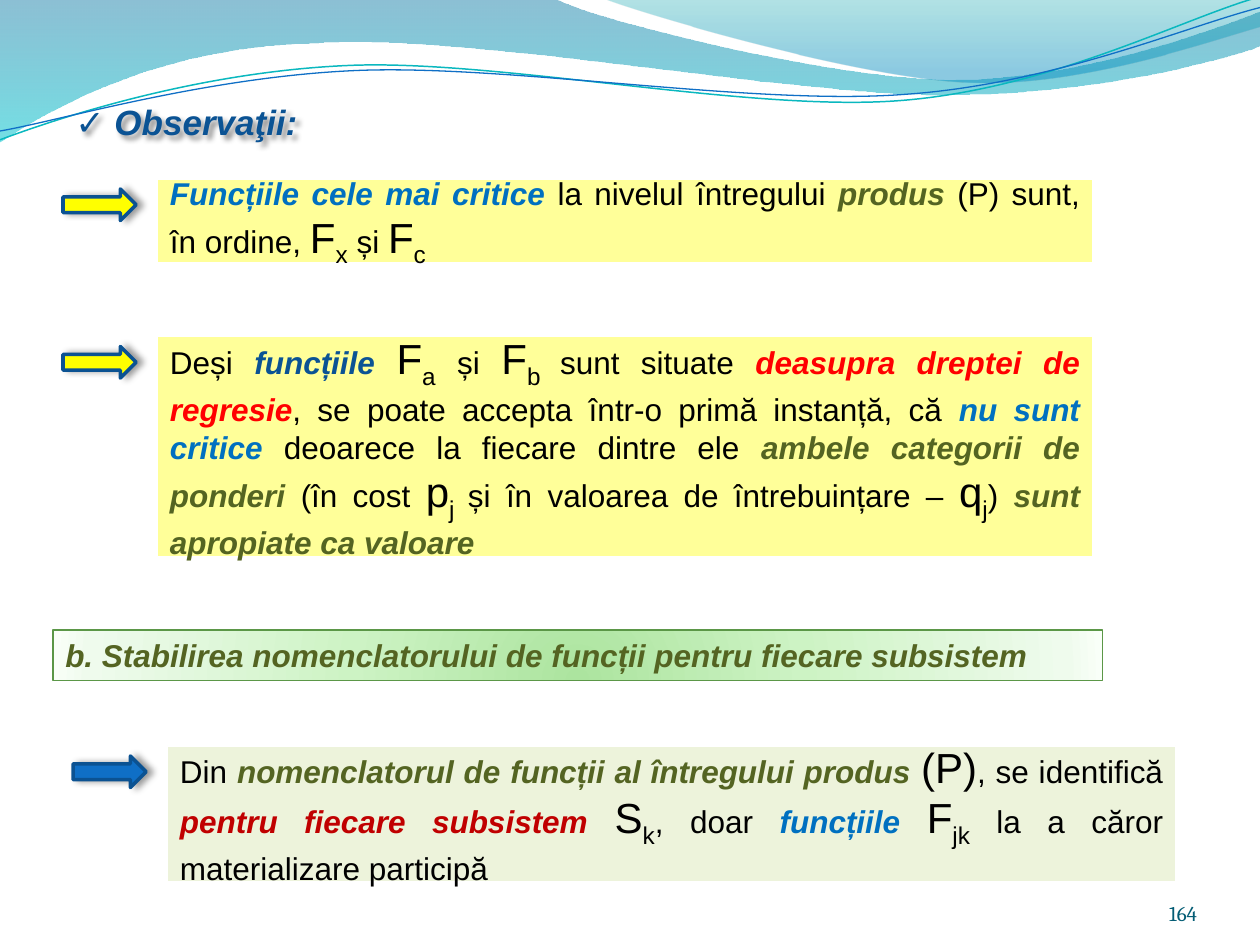
from lxml.etree import SubElement
from pptx import Presentation
from pptx.dml.color import RGBColor
from pptx.enum.shapes import MSO_SHAPE
from pptx.enum.text import MSO_ANCHOR, PP_ALIGN
from pptx.oxml import parse_xml
from pptx.oxml.ns import nsdecls, qn
from pptx.util import Inches, Pt

THEME = {
    "font": "Arial", "number_font": "Cambria",
    "title": 20, "body": 18, "symbol": 24, "number": 12,
    "black": "000000", "navy": "0B5394", "blue": "0070C0", "olive": "546422",
    "red": "FF0000", "dark_red": "C00000", "teal": "045D75",
    "arrow_line": "0B5292", "arrow_blue": "0F6FC6", "yellow": "FFFF00",
    "note": "FFFF99", "pale_green": "EDF3DB", "white": "FFFFFF", "green_line": "5B9747",
}

# Span styles: a colour name gives bold italic; "text", "symbol" and "sub" are plain black.
CRITICAL = [
    ("Funcțiile cele mai critice ", "blue"), ("la nivelul întregului ", "text"),
    ("produs", "olive"), (" (P) sunt, în ordine, ", "text"),
    ("F", "symbol"), ("x", "sub"), (" și ", "text"), ("F", "symbol"), ("c", "sub"),
]
NOT_CRITICAL = [
    ("Deși ", "text"), ("funcțiile ", "navy"), ("F", "symbol"), ("a", "sub"),
    (" și ", "text"), ("F", "symbol"), ("b ", "sub"), ("sunt situate ", "text"),
    ("deasupra dreptei de regresie", "red"),
    (", se poate accepta într-o primă instanță, că ", "text"),
    ("nu sunt critice", "blue"), (" deoarece la fiecare dintre ele ", "text"),
    ("ambele categorii de ponderi ", "olive"), ("(în cost ", "text"),
    ("p", "symbol"), ("j ", "sub"), ("și în valoarea de întrebuințare – ", "text"),
    ("q", "symbol"), ("j", "sub"), (") ", "text"), ("sunt apropiate ca valoare", "olive"),
]
SUBSYSTEM = [
    ("Din ", "text"), ("nomenclatorul de funcții al întregului produs ", "olive"),
    ("(P)", "symbol"), (", se identifică ", "text"),
    ("pentru fiecare subsistem ", "dark_red"), ("S", "symbol"), ("k", "sub"),
    (", doar ", "text"), ("funcțiile ", "blue"), ("F", "symbol"), ("jk", "sub"),
    (" la a căror materializare participă", "text"),
]
# Spans, box left/top/width/height, box colour, arrow colour
NOTES = [
    (CRITICAL, (1.25, 1.42, 7.42, 0.67), "note", "yellow"),
    (NOT_CRITICAL, (1.25, 2.67, 7.42, 1.75), "note", "yellow"),
    (SUBSYSTEM, (1.33, 5.92, 8, 1.08), "pale_green", "arrow_blue"),
]
ARROW_SIZE = (0.58, 0.25)
ARROW_OFFSET = (-0.75, 0.08)

# A two-number point is a straight segment; six numbers are a cubic curve.
DOWNWARD = '<a:lin ang="5400000" scaled="1"/>'
BANDS = [
    ([(0, 0), (4.4, -0.01), (4.76, 0.17, 6.64, 0.63, 7.58, 0.63),
      (8.53, 0.63, 9.58, 0.26, 10, 0.09), (10.01, 0.36),
      (9.83, 0.44, 8.7, 0.76, 7.46, 0.75), (6.22, 0.75, 3.82, 0.28, 2.57, 0.34),
      (1.29, 0.36, 0.46, 0.83, -0.01, 1.13)],
     [(0, "0074A1", 45), (100, "00C6CF", 55)]),
    ([(4.79, -0.01), (5.09, 0.11, 6.82, 0.62, 7.69, 0.65),
      (8.56, 0.69, 9.61, 0.32, 10, 0.21), (10, 0)],
     [(0, "00A1A9", 30), (80, "008BBF", 45)]),
]
WAVES = [
    ([(0, 1.11), (0.48, 0.93, 1.58, 0.57, 2.77, 0.52), (3.95, 0.47, 5.93, 0.89, 7.13, 0.8),
      (8.33, 0.71, 9.38, 0.15, 9.98, -0.02)], "0AB8BF", 0.85),
    ([(0, 1.04), (0.47, 0.96, 1.64, 0.61, 2.83, 0.56), (4.03, 0.51, 5.97, 0.84, 7.17, 0.75),
      (8.36, 0.67, 9.41, 0.21, 10, 0.06)], "0F6FC6", 0.75),
]
HEADING_STOPS = [(0, "ACE49F", 100), (43, "CDF3C4", 100), (93, "EFFBED", 100), (100, "F9FFF8", 100)]
HEADING_GLOW = ('<a:path path="circle"><a:fillToRect l="50000" t="130000" r="50000" b="-30000"/>'
                '</a:path>')


def color(name):
    return RGBColor.from_string(THEME.get(name, name))


def style_shape(shape, fill, line, width):
    shape.shadow.inherit = False
    if fill:
        shape.fill.solid()
        shape.fill.fore_color.rgb = color(fill)
    else:
        shape.fill.background()
    if line:
        shape.line.color.rgb = color(line)
        shape.line.width = Pt(width)
    else:
        shape.line.fill.background()


def set_gradient(shape, stops, direction):
    """Swap the empty fill for a gradient of (position, colour, opacity) stops."""
    stop_xml = "".join(
        f'<a:gs pos="{position * 1000}"><a:srgbClr val="{rgb}">'
        f'<a:alpha val="{opacity * 1000}"/></a:srgbClr></a:gs>'
        for position, rgb, opacity in stops)
    properties = shape._element.spPr
    properties.replace(properties.find(qn("a:noFill")), parse_xml(
        f'<a:gradFill {nsdecls("a")} rotWithShape="1"><a:gsLst>{stop_xml}</a:gsLst>'
        f'{direction}</a:gradFill>'))


def add_shadow(shape, opacity, blur, distance, angle):
    shape.shadow.inherit = False
    effects = shape._element.spPr.find(qn("a:effectLst"))
    shadow = SubElement(effects, qn("a:outerShdw"), blurRad=str(Pt(blur)), dist=str(Pt(distance)),
                        dir=str(angle * 60000), algn="tl", rotWithShape="0")
    shade = SubElement(shadow, qn("a:srgbClr"), val=THEME["black"])
    SubElement(shade, qn("a:alpha"), val=str(opacity * 1000))


def add_outline(slide, segments, closed):
    """Draw straight segments first, then join each group of three into a cubic curve."""
    points = [(Inches(segment[i]), Inches(segment[i + 1]))
              for segment in segments for i in range(0, len(segment), 2)]
    builder = slide.shapes.build_freeform(*points[0], scale=1.0)
    builder.add_line_segments(points[1:], close=closed)
    shape = builder.convert_to_shape()
    lines = iter(list(shape._element.iter(qn("a:lnTo"))))
    for segment in segments[1:]:
        line = next(lines)
        if len(segment) == 6:
            curve = parse_xml(f'<a:cubicBezTo {nsdecls("a")}/>')
            line.addprevious(curve)
            for part in (line, next(lines), next(lines)):
                curve.append(part[0])
                part.getparent().remove(part)
    return shape


def add_box(slide, kind, box, fill, line, width):
    shape = slide.shapes.add_shape(kind, *map(Inches, box))
    style_shape(shape, fill, line, width)
    return shape


def set_font(font, size, name, bold=False, face="font"):
    font.name, font.size = THEME[face], Pt(THEME[size])
    font.color.rgb = color(name)
    font.bold = font.italic = bold


def write_spans(paragraph, spans):
    for text, style in spans:
        run = paragraph.add_run()
        run.text = text
        plain = style in ("text", "symbol", "sub")
        size = "symbol" if style in ("symbol", "sub") else "body"
        set_font(run.font, size, "black" if plain else style, not plain)
        if style == "sub":
            run._r.get_or_add_rPr().set("baseline", "-25000")


def add_note(slide, spans, box, fill, arrow_fill):
    shape = add_box(slide, MSO_SHAPE.RECTANGLE, box, fill, "white", 1)
    frame = shape.text_frame
    frame.word_wrap = True
    frame.vertical_anchor = MSO_ANCHOR.MIDDLE
    frame.paragraphs[0].alignment = PP_ALIGN.JUSTIFY
    write_spans(frame.paragraphs[0], spans)
    place = (box[0] + ARROW_OFFSET[0], box[1] + ARROW_OFFSET[1], *ARROW_SIZE)
    arrow = add_box(slide, MSO_SHAPE.RIGHT_ARROW, place, arrow_fill, "arrow_line", 2)
    add_shadow(arrow, 40, 4, 3, 0)


def add_title(slide):
    box = slide.shapes.add_textbox(*map(Inches, (0.5, 0.75, 2.04, 0.44)))
    box.fill.background()
    add_shadow(box, 43, 3, 3, 45)
    box.text_frame.word_wrap = False
    paragraph = box.text_frame.paragraphs[0]
    paragraph.text = "✓ Observaţii:"
    set_font(paragraph.font, "title", "navy", True)


def add_heading(slide):
    shape = add_box(slide, MSO_SHAPE.RECTANGLE, (0.42, 5, 8.33, 0.4), None, "green_line", 0.75)
    set_gradient(shape, HEADING_STOPS, HEADING_GLOW)
    shape.text_frame.word_wrap = True
    shape.text_frame.vertical_anchor = MSO_ANCHOR.TOP
    paragraph = shape.text_frame.paragraphs[0]
    paragraph.alignment = PP_ALIGN.LEFT
    write_spans(paragraph, [
        ("b. Stabilirea nomenclatorului de funcții pentru fiecare subsistem", "olive")])


def add_number(slide):
    frame = slide.shapes.add_textbox(*map(Inches, (8.67, 6.95, 0.83, 0.4))).text_frame
    frame.margin_left = frame.margin_right = frame.margin_top = frame.margin_bottom = 0
    frame.word_wrap = True
    frame.vertical_anchor = MSO_ANCHOR.BOTTOM
    paragraph = frame.paragraphs[0]
    paragraph.text, paragraph.alignment = "164", PP_ALIGN.RIGHT
    set_font(paragraph.font, "number", "teal", face="number_font")


def main():
    presentation = Presentation()
    presentation.slide_width, presentation.slide_height = Inches(10), Inches(7.5)
    slide = presentation.slides.add_slide(presentation.slide_layouts[6])
    for segments, stops in BANDS:
        band = add_outline(slide, segments, True)
        style_shape(band, None, None, 0)
        set_gradient(band, stops, DOWNWARD)
    for segments, line, width in WAVES:
        style_shape(add_outline(slide, segments, False), None, line, width)
    add_number(slide)
    add_title(slide)
    for note in NOTES:
        add_note(slide, *note)
    add_heading(slide)
    presentation.save("out.pptx")


if __name__ == "__main__":
    main()
